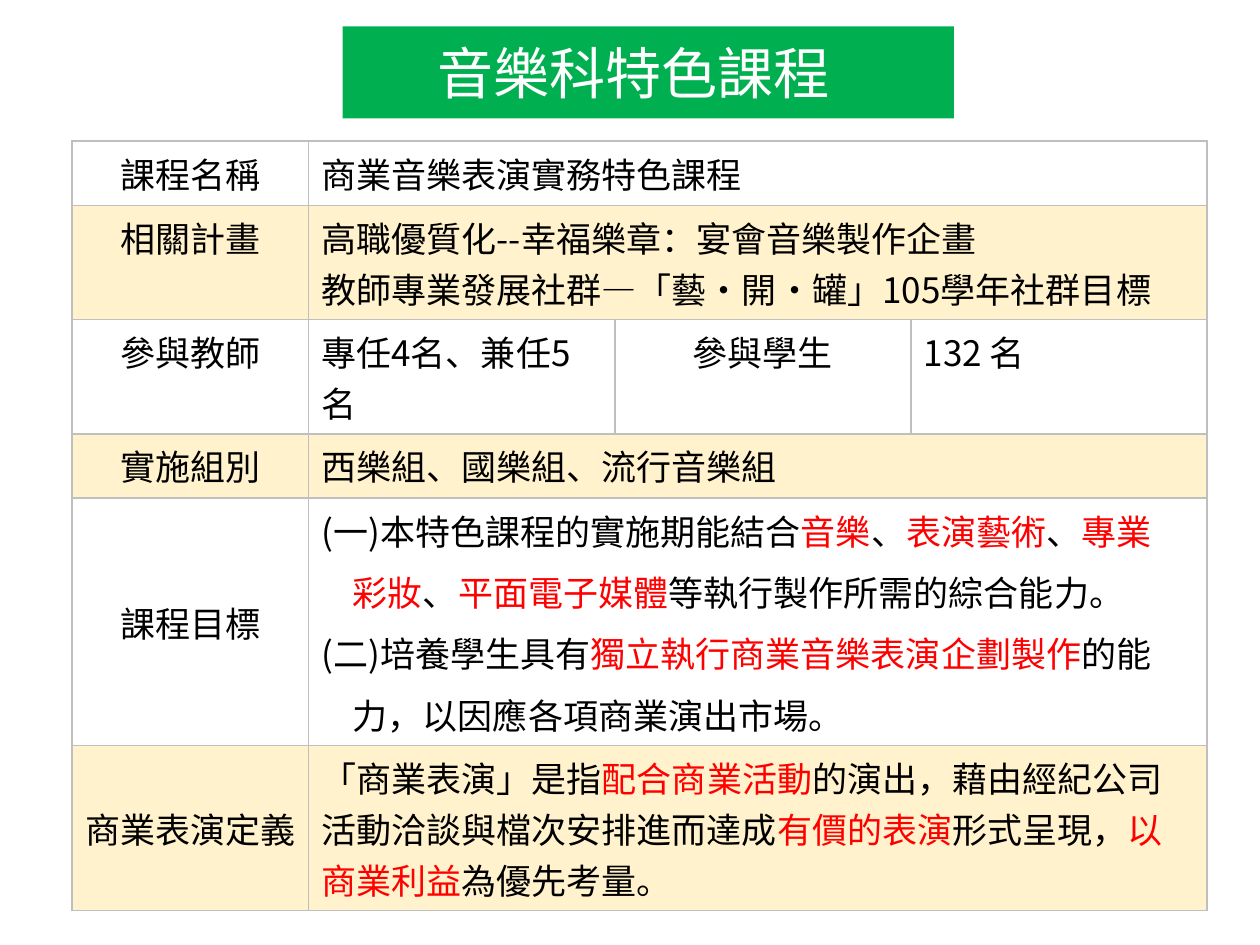
from dataclasses import dataclass

from lxml.etree import SubElement
from pptx import Presentation
from pptx.dml.color import RGBColor
from pptx.enum.text import MSO_ANCHOR, MSO_AUTO_SIZE, PP_ALIGN
from pptx.oxml import parse_xml
from pptx.oxml.ns import nsdecls, qn
from pptx.util import Inches, Pt

FONT = "Noto Sans CJK SC"
BLACK = RGBColor(0x00, 0x00, 0x00)
WHITE = RGBColor(0xFF, 0xFF, 0xFF)
RED = RGBColor(0xFF, 0x00, 0x00)
GREEN = RGBColor(0x00, 0xB0, 0x50)
AMBER = RGBColor(0xFF, 0xC0, 0x00)
BORDER = RGBColor(0xBF, 0xBF, 0xBF)

COLUMN_WIDTHS = (1.88, 2.43, 2.35, 2.35)
INDENT_MARK = ">"  # starts a continuation line
RED_MARK = "*"  # encloses emphasised words


@dataclass
class Row:
    height: float
    texts: tuple[str, ...]
    heading_anchor: MSO_ANCHOR = MSO_ANCHOR.TOP
    space_before: float = 0


ROWS = (
    Row(0.51, ("課程名稱", "商業音樂表演實務特色課程"), MSO_ANCHOR.MIDDLE),
    Row(0.9, ("相關計畫", "高職優質化--幸福樂章：宴會音樂製作企畫\n"
              "教師專業發展社群—「藝‧開‧罐」105學年社群目標")),
    Row(0.9, ("參與教師", "專任4名、兼任5名", "參與學生", "132 名")),
    Row(0.51, ("實施組別", "西樂組、國樂組、流行音樂組")),
    Row(1.96, ("課程目標", "(一)本特色課程的實施期能結合*音樂*、*表演藝術*、*專業*\n"
               ">*彩妝*、*平面電子媒體*等執行製作所需的綜合能力。\n"
               "(二)培養學生具有*獨立執行商業音樂表演企劃製作*的能\n"
               ">力，以因應各項商業演出市場。"), MSO_ANCHOR.MIDDLE, 6),
    Row(1.31, ("商業表演定義", "「商業表演」是指*配合商業活動*的演出，藉由經紀公司"
               "活動洽談與檔次安排進而達成*有價的表演*形式呈現，"
               "*以商業利益*為優先考量。"), MSO_ANCHOR.MIDDLE),
)


def write_text(text_frame, text: str, *, size: float = 20, color: RGBColor = BLACK,
               align: PP_ALIGN = PP_ALIGN.LEFT, space_before: float = 0) -> None:
    for index, line in enumerate(text.split("\n")):
        paragraph = text_frame.add_paragraph() if index else text_frame.paragraphs[0]
        paragraph.alignment = align
        paragraph.space_before = Pt(space_before if index else 0)
        if line.startswith(INDENT_MARK):
            properties = paragraph._p.get_or_add_pPr()
            properties.set("marL", str(Inches(0.25)))
            properties.set("indent", "0")
        for part_index, part in enumerate(line.lstrip(INDENT_MARK).split(RED_MARK)):
            if not part:
                continue
            run = paragraph.add_run()
            run.text = part
            run.font.size = Pt(size)
            run.font.name = FONT
            run.font.color.rgb = RED if part_index % 2 else color
            SubElement(run._r.get_or_add_rPr(), qn("a:ea"), typeface=FONT)


def style_cell(cell, shaded: bool) -> None:
    if shaded:
        cell.fill.solid()
        cell.fill.fore_color.rgb = AMBER
        color = cell._tc.tcPr.find(".//" + qn("a:srgbClr"))
        SubElement(color, qn("a:alpha"), val="20000")
    else:
        cell.fill.background()
    # Borders come before the fill in the cell properties
    for position, side in enumerate(("lnL", "lnR", "lnT", "lnB")):
        cell._tc.tcPr.insert(position, parse_xml(
            f'<a:{side} {nsdecls("a")} w="{Pt(1)}"><a:solidFill>'
            f'<a:srgbClr val="{BORDER}"/></a:solidFill></a:{side}>'))


def add_title(slide) -> None:
    title = slide.shapes.title
    title.left, title.top = Inches(2.72), Inches(0.21)
    title.width, title.height = Inches(4.85), Inches(0.73)
    title.fill.solid()
    title.fill.fore_color.rgb = GREEN
    frame = title.text_frame
    frame.auto_size = MSO_AUTO_SIZE.NONE
    frame.word_wrap = True
    frame.vertical_anchor = MSO_ANCHOR.MIDDLE
    frame.margin_left = Inches(0.75)
    frame.margin_top = frame.margin_right = frame.margin_bottom = Inches(0.08)
    write_text(frame, "音樂科特色課程", size=32, color=WHITE)


def add_course_table(slide) -> None:
    table = slide.shapes.add_table(
        len(ROWS), len(COLUMN_WIDTHS), Inches(0.57), Inches(1.12),
        Inches(sum(COLUMN_WIDTHS)), Inches(sum(row.height for row in ROWS))).table
    table.first_row = table.horz_banding = False
    for column, width in zip(table.columns, COLUMN_WIDTHS):
        column.width = Inches(width)
    for row_index, row in enumerate(ROWS):
        table.rows[row_index].height = Inches(row.height)
        for column_index in range(len(COLUMN_WIDTHS)):
            style_cell(table.cell(row_index, column_index), shaded=row_index % 2 == 1)
        if len(row.texts) == 2:
            table.cell(row_index, 1).merge(table.cell(row_index, len(COLUMN_WIDTHS) - 1))
        # Headings sit in the even columns, their values in the odd ones
        for column_index, text in enumerate(row.texts):
            cell = table.cell(row_index, column_index)
            is_heading = column_index % 2 == 0
            cell.vertical_anchor = row.heading_anchor if is_heading else MSO_ANCHOR.TOP
            write_text(cell.text_frame, text, space_before=row.space_before,
                       align=PP_ALIGN.CENTER if is_heading else PP_ALIGN.LEFT)


def main() -> None:
    presentation = Presentation()
    presentation.slide_width, presentation.slide_height = Inches(10), Inches(7.5)
    slide = presentation.slides.add_slide(presentation.slide_layouts[5])  # title only
    add_title(slide)
    add_course_table(slide)
    presentation.save("out.pptx")


if __name__ == "__main__":
    main()
